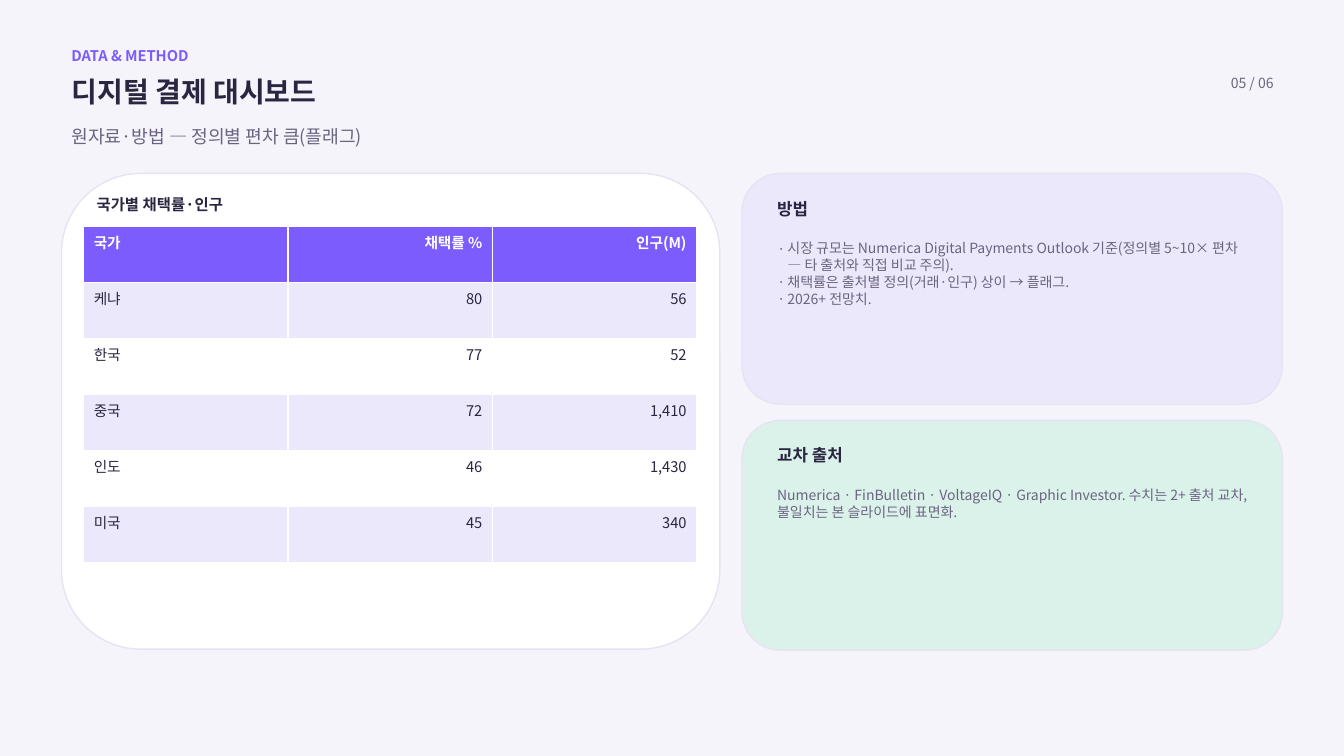
from pptx import Presentation
from pptx.dml.color import RGBColor
from pptx.enum.shapes import MSO_SHAPE
from pptx.enum.text import MSO_ANCHOR, MSO_AUTO_SIZE, PP_ALIGN
from pptx.oxml.ns import qn
from pptx.util import Inches, Pt
from lxml import etree

FONT = "Noto Sans CJK KR"
C = {"bg": "F5F4FB", "violet": "7C5CFC", "ink": "2A2540", "grey": "6B6480",
     "white": "FFFFFF", "lilac": "ECE8FB", "mint": "DAF2EA", "edge": "E6E3F2"}


def add_run(p, text, size, color, bold=False, align=PP_ALIGN.LEFT):
    p.alignment = align
    p.space_before = Pt(0)
    r = p.add_run()
    r.text = text
    r.font.name, r.font.size, r.font.bold = FONT, Pt(size), bold
    r.font.color.rgb = RGBColor.from_string(C[color])
    etree.SubElement(r.font._element, qn("a:ea"), typeface=FONT)


def place(sp, left, top, width, height, wrap=True):
    """Position a text shape and return its top-anchored, fixed-size frame."""
    sp.left, sp.top, sp.width, sp.height = map(Inches, (left, top, width, height))
    tf = sp.text_frame
    tf.word_wrap = wrap
    tf.auto_size = MSO_AUTO_SIZE.NONE
    tf.vertical_anchor = MSO_ANCHOR.TOP
    return tf


prs = Presentation()
prs.slide_width, prs.slide_height = Inches(13.33), Inches(7.5)
s = prs.slides.add_slide(prs.slide_layouts[1])
s.background.fill.solid()
s.background.fill.fore_color.rgb = RGBColor.from_string(C["bg"])

# Title
tf = place(s.shapes.title, 0.61, 0.69, 2.92, 0.44, wrap=False)
add_run(tf.paragraphs[0], "디지털 결제 대시보드", 20, "ink", True)

# Cards
cards = [(0.61, 1.72, 6.53, 4.72, "white"),
         (7.36, 1.72, 5.36, 2.29, "lilac"),
         (7.36, 4.17, 5.36, 2.28, "mint")]
for left, top, width, height, fill in cards:
    card = s.shapes.add_shape(MSO_SHAPE.ROUNDED_RECTANGLE, *map(Inches, (left, top, width, height)))
    card.shadow.inherit = False
    card.fill.solid()
    card.fill.fore_color.rgb = RGBColor.from_string(C[fill])
    card.line.color.rgb = RGBColor.from_string(C["edge"])
    card.line.width = Pt(1)

# Single-paragraph labels
labels = [
    ("DATA & METHOD", 0.61, 0.42, 1.48, 0.28, 10.5, "violet", True, False, PP_ALIGN.LEFT),
    ("05 / 06", 11.06, 0.69, 1.67, 0.27, 10, "grey", False, True, PP_ALIGN.RIGHT),
    ("원자료·방법 — 정의별 편차 큼(플래그)", 0.61, 1.19, 3.35, 0.32, 13, "grey", False, False, PP_ALIGN.LEFT),
    ("국가별 채택률·인구", 0.86, 1.89, 5.97, 0.29, 11, "ink", True, True, PP_ALIGN.LEFT),
    ("방법", 7.61, 1.92, 4.86, 0.3, 12, "ink", True, True, PP_ALIGN.LEFT),
    ("교차 출처", 7.61, 4.36, 4.86, 0.3, 12, "ink", True, True, PP_ALIGN.LEFT),
    ("Numerica · FinBulletin · VoltageIQ · Graphic Investor. 수치는 2+ 출처 교차, 불일치는 본 슬라이드에 표면화.",
     7.61, 4.78, 4.86, 0.44, 10, "grey", False, True, PP_ALIGN.LEFT),
]
for text, left, top, width, height, size, color, bold, wrap, align in labels:
    box = s.shapes.add_textbox(0, 0, 0, 0)
    tf = place(box, left, top, width, height, wrap)
    add_run(tf.paragraphs[0], text, size, color, bold, align)

# Method list, brought in front of its card
body = s.placeholders[1]
s.shapes.element.append(body.element)
tf = place(body, 7.61, 2.33, 4.86, 0.77)
methods = ["시장 규모는 Numerica Digital Payments Outlook 기준(정의별 5~10× 편차 — 타 출처와 직접 비교 주의).",
           "채택률은 출처별 정의(거래·인구) 상이 → 플래그.",
           "2026+ 전망치."]
for i, text in enumerate(methods):
    p = tf.add_paragraph() if i else tf.paragraphs[0]
    pPr = p._p.get_or_add_pPr()
    pPr.set("marL", str(Inches(0.1)))
    pPr.set("indent", str(-Inches(0.1)))
    etree.SubElement(pPr, qn("a:buFont"), typeface=FONT)
    etree.SubElement(pPr, qn("a:buChar"), char="·")
    add_run(p, text, 10, "grey")

# Country table
rows = [("국가", "채택률 %", "인구(M)"),
        ("케냐", "80", "56"),
        ("한국", "77", "52"),
        ("중국", "72", "1,410"),
        ("인도", "46", "1,430"),
        ("미국", "45", "340")]
table = s.shapes.add_table(len(rows), 3, Inches(0.83), Inches(2.25), Inches(6.08), Inches(3.33)).table
for i, row in enumerate(rows):
    fill = "violet" if i == 0 else ("lilac" if i % 2 else "white")
    for j, text in enumerate(row):
        cell = table.cell(i, j)
        cell.fill.solid()
        cell.fill.fore_color.rgb = RGBColor.from_string(C[fill])
        add_run(cell.text_frame.paragraphs[0], text, 10.5, "ink" if i else "white",
                i == 0, PP_ALIGN.RIGHT if j else PP_ALIGN.LEFT)

prs.save("out.pptx")
